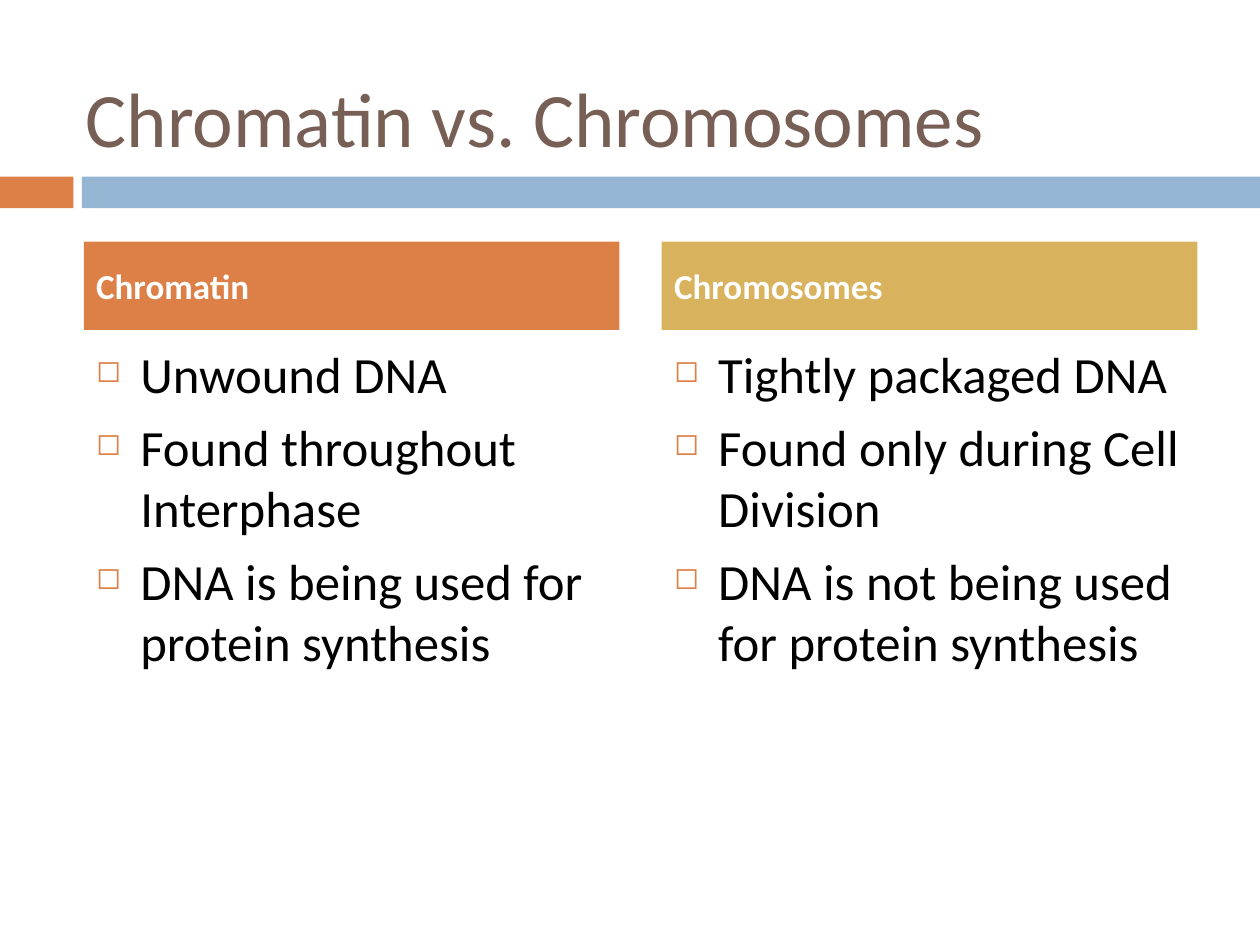
from lxml import etree
from pptx import Presentation
from pptx.dml.color import RGBColor
from pptx.enum.shapes import MSO_SHAPE
from pptx.enum.text import MSO_ANCHOR, PP_ALIGN
from pptx.oxml.ns import qn
from pptx.util import Cm, Pt

RECTANGLE = MSO_SHAPE.RECTANGLE
MIDDLE, TOP = MSO_ANCHOR.MIDDLE, MSO_ANCHOR.TOP
LEFT = PP_ALIGN.LEFT

ORANGE = RGBColor(0xDD, 0x80, 0x47)
BLUE = RGBColor(0x94, 0xB6, 0xD2)
GOLD = RGBColor(0xD8, 0xB2, 0x5C)
BROWN = RGBColor(0x77, 0x5F, 0x55)
BLACK = RGBColor(0, 0, 0)
WHITE = RGBColor(0xFF, 0xFF, 0xFF)

FONT = "Calibri"
PAGE_WIDTH, PAGE_HEIGHT = 25.4, 19.05
COLUMN_LEFT, COLUMN_TOP = 1.69, 4.87
COLUMN_WIDTH, COLUMN_GAP = 10.8, 0.85
COLUMN_HEIGHT = 11.87
HEADING_HEIGHT, HEADING_GAP = 1.78, 0.13
BULLET_INDENT = Cm(0.89)

COLUMNS = [
    ("Chromatin", ORANGE,
     ["Unwound DNA",
      "Found throughout Interphase",
      "DNA is being used for protein synthesis"]),
    ("Chromosomes", GOLD,
     ["Tightly packaged DNA",
      "Found only during Cell Division",
      "DNA is not being used for protein synthesis"]),
]


def add_bullet(para):
    """Give the paragraph a small orange square and a hanging indent."""
    properties = para._p.get_or_add_pPr()
    properties.set("marL", str(BULLET_INDENT))
    properties.set("indent", str(-BULLET_INDENT))
    colour = etree.SubElement(properties, qn("a:buClr"))
    etree.SubElement(colour, qn("a:srgbClr"), val=str(ORANGE))
    etree.SubElement(properties, qn("a:buSzPct"), val="60000")
    etree.SubElement(properties, qn("a:buChar"), char="◻")


def write_text(shape, lines, *, size, color, bold=False, anchor=TOP,
               space_before=0, bulleted=False):
    frame = shape.text_frame
    frame.word_wrap = True
    frame.vertical_anchor = anchor
    for index, line in enumerate(lines):
        para = frame.add_paragraph() if index else frame.paragraphs[0]
        para.alignment = LEFT
        para.space_before = Pt(space_before)
        if bulleted:
            add_bullet(para)
        span = para.add_run()
        span.text = line
        span.font.name = FONT
        span.font.size = Pt(size)
        span.font.bold = bold
        span.font.color.rgb = color


def add_block(page, left, top, width, height, color):
    block = page.shapes.add_shape(
        RECTANGLE, Cm(left), Cm(top), Cm(width), Cm(height))
    block.shadow.inherit = False
    block.fill.solid()
    block.fill.fore_color.rgb = color
    block.line.fill.background()
    return block


def add_text_box(page, left, top, width, height):
    return page.shapes.add_textbox(Cm(left), Cm(top), Cm(width), Cm(height))


def add_band(page, left, top, width, height):
    """Draw the divider: a short orange block, a gap and a blue bar."""
    block_width, gap = 1.48, 0.17
    bar_offset = block_width + gap
    add_block(page, left, top, block_width, height, ORANGE)
    add_block(page, left + bar_offset, top, width - bar_offset, height, BLUE)


def add_title(page, left, top, width, height):
    title = add_text_box(page, left, top, width, height)
    write_text(title, ["Chromatin vs. Chromosomes"],
               size=44, color=BROWN, anchor=MIDDLE)


def add_column(page, left, top, width, height, heading, color, points):
    header = add_block(page, left, top, width, HEADING_HEIGHT, color)
    write_text(header, [heading], size=20, color=WHITE, bold=True,
               anchor=MIDDLE, space_before=7)
    offset = HEADING_HEIGHT + HEADING_GAP
    body = add_text_box(page, left, top + offset, width, height - offset)
    write_text(body, points, size=29, color=BLACK, space_before=7,
               bulleted=True)


def main():
    deck = Presentation()
    deck.slide_width, deck.slide_height = Cm(PAGE_WIDTH), Cm(PAGE_HEIGHT)
    page = deck.slides.add_slide(deck.slide_layouts[6])
    add_band(page, 0, 3.56, PAGE_WIDTH, 0.64)
    add_title(page, 1.48, 0.76, 22.65, 3.18 - 0.01)
    for index, (heading, color, points) in enumerate(COLUMNS):
        left = COLUMN_LEFT + index * (COLUMN_WIDTH + COLUMN_GAP)
        add_column(page, left, COLUMN_TOP, COLUMN_WIDTH, COLUMN_HEIGHT,
                   heading, color, points)
    deck.save("out.pptx")


if __name__ == "__main__":
    main()
